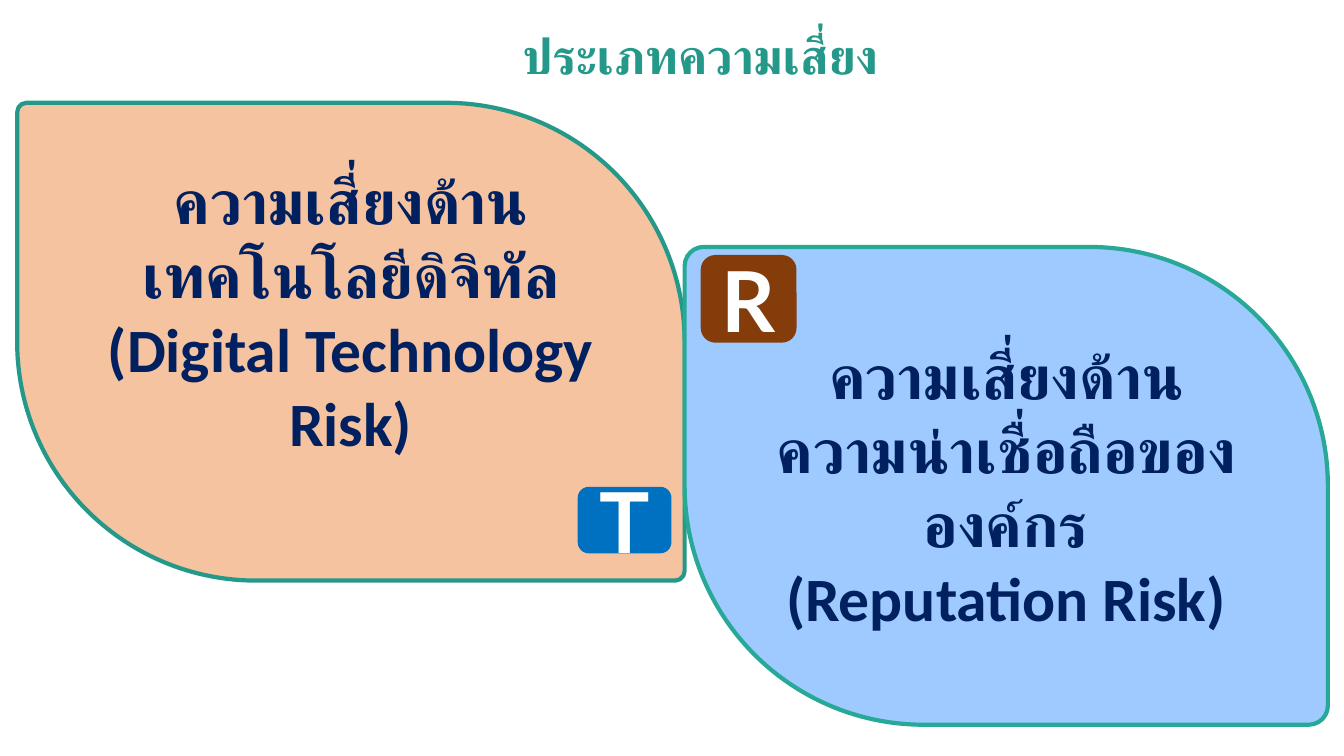
from pptx import Presentation
from pptx.dml.color import RGBColor
from pptx.enum import shapes, text
from pptx.oxml import parse_xml
from pptx.oxml.ns import nsdecls
from pptx.util import Inches, Pt


def color(value):
    return RGBColor.from_string(value)


def add_panel(slide, kind, place, fill, lines, size, font, ink, border=None):
    """Add a filled shape with bold centred text, one paragraph per line."""
    panel = slide.shapes.add_shape(kind, *[Inches(n) for n in place])
    panel.shadow.inherit = False
    panel.fill.solid()
    panel.fill.fore_color.rgb = color(fill)
    if border:
        panel.line.color.rgb = color(border)
        panel.line.width = Pt(3)
    else:
        panel.line.fill.background()
    frame = panel.text_frame
    frame.word_wrap = True
    frame.vertical_anchor = text.MSO_ANCHOR.MIDDLE
    for index, line in enumerate(lines):
        paragraph = frame.add_paragraph() if index else frame.paragraphs[0]
        paragraph.alignment = text.PP_ALIGN.CENTER
        run = paragraph.add_run()
        run.text = line
        run.font.size = Pt(size)
        run.font.bold = True
        run.font.name = font
        run.font.color.rgb = color(ink)
        # Thai letters take the complex-script font
        run.font._element.append(
            parse_xml(f'<a:cs {nsdecls("a")} typeface="{font}"/>'))
    return panel


ROUNDED = shapes.MSO_SHAPE.ROUNDED_RECTANGLE
LEAF = shapes.MSO_SHAPE.ROUND_2_DIAG_RECTANGLE

prs = Presentation()
prs.slide_width, prs.slide_height = Inches(13.33), Inches(7.5)
slide = prs.slides.add_slide(prs.slide_layouts[6])

add_panel(slide, ROUNDED, (3.23, 0.11, 7.43, 0.87), "FFFFFF",
          ["ประเภทความเสี่ยง"], 35, "Lato", "249989")

# Risk leaves: place, fill, border, small corner, bottom inset, lines
risks = [
    ((0.17, 1.02, 6.62, 4.74), "F6C3A0", "249989", 0.02, 0.66,
     ["ความเสี่ยงด้านเทคโนโลยีดิจิทัล (Digital Technology Risk)"]),
    ((6.79, 2.45, 6.38, 4.74), "9FCAFF", "28A896", 0.04, 0.05,
     ["ความเสี่ยงด้านความน่าเชื่อถือขององค์กร", "(Reputation Risk)"]),
]
for place, fill, border, corner, inset, lines in risks:
    leaf = add_panel(slide, LEAF, place, fill, lines, 44, "Calibri", "002060", border)
    leaf.adjustments[0] = corner
    leaf.adjustments[1] = 0.5
    leaf.text_frame.margin_bottom = Inches(inset)

badges = [
    ("T", (5.73, 4.83, 0.93, 0.66), "0070C0"),
    ("R", (6.95, 2.53, 0.95, 0.87), "843C0B"),
]
for letter, place, fill in badges:
    add_panel(slide, ROUNDED, place, fill, [letter], 60, "Lato", "FFFFFF")

prs.save("out.pptx")
